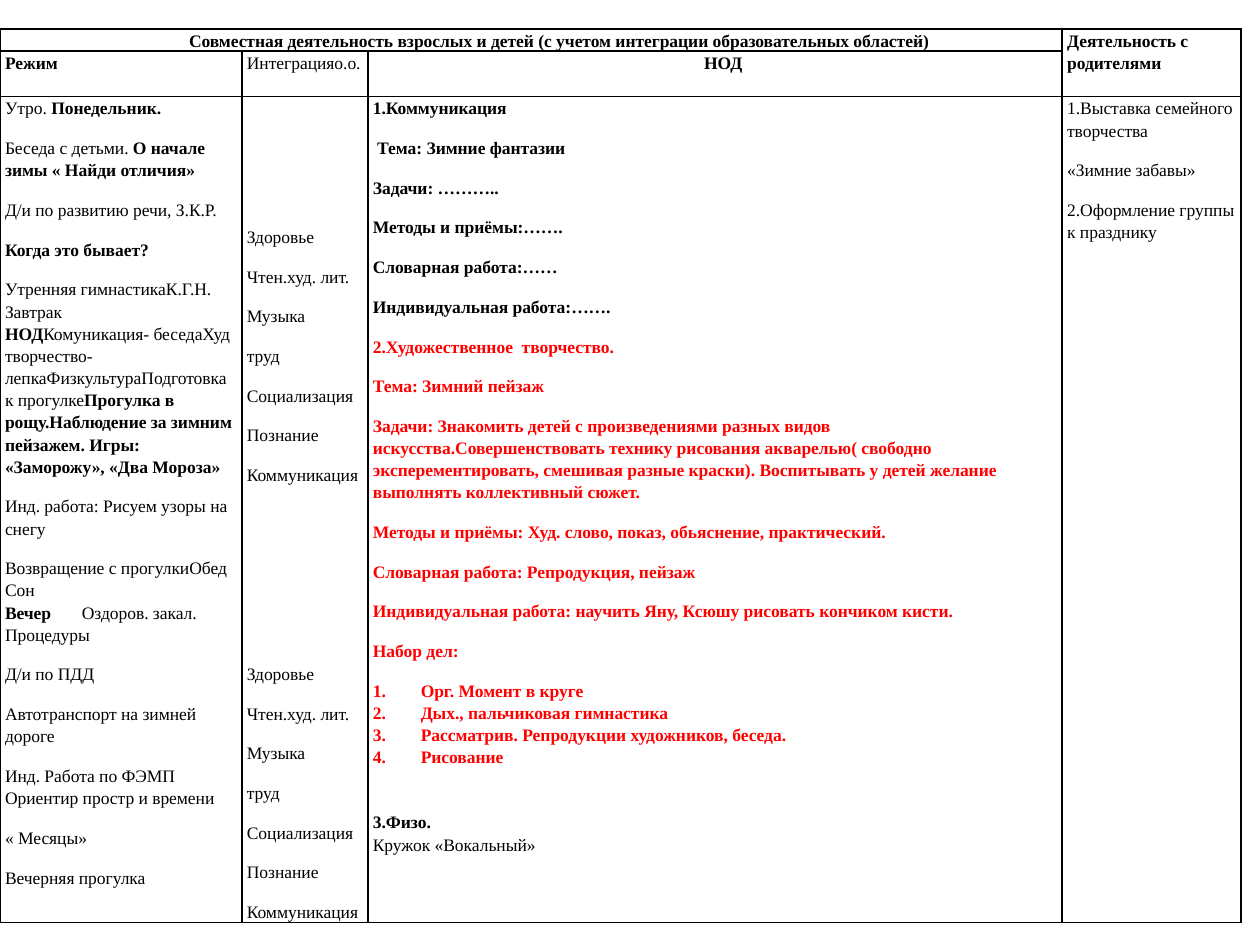
from dataclasses import dataclass
from lxml.etree import SubElement
from pptx import Presentation
from pptx.dml.color import RGBColor
from pptx.enum.text import PP_ALIGN
from pptx.oxml.ns import qn
from pptx.util import Inches, Pt

COLORS = {"black": "000000", "red": "FF0000", "white": "FFFFFF"}
FONT = "Times New Roman"
COLUMNS = [1.92, 1, 5.51, 1.42]
ROWS = [0.17, 0.36, 6.55]


@dataclass
class Entry:
    """One paragraph of a cell; runs alternate between plain and bold."""
    runs: list
    bold: bool = False
    color: str = "black"
    before: float = 0
    after: float = 10
    numbered: bool = False
    tab: float = 0


def plain(*runs, **options):
    """Return a paragraph whose first run is plain."""
    return Entry(list(runs), **options)


def strong(*runs, **options):
    """Return a paragraph whose first run is bold."""
    return Entry(list(runs), bold=True, **options)


REGIME = [
    plain("Утро. ", "Понедельник."),
    plain("Беседа с детьми.", " О начале зимы « Найди отличия»"),
    plain("Д/и по развитию речи, З.К.Р."),
    strong("Когда это бывает?"),
    plain("Утренняя гимнастикаК.Г.Н. Завтрак", after=0),
    strong("НОД", "Комуникация- беседаХуд творчество-лепкаФизкультураПодготовка к прогулке",
           "Прогулка в рощу.Наблюдение за зимним пейзажем. Игры: «Заморожу», «Два Мороза»"),
    plain("Инд. работа: Рисуем узоры на снегу"),
    plain("Возвращение с прогулкиОбед", after=0),
    plain("Сон", after=0),
    strong("Вечер", "\tОздоров. закал. Процедуры", tab=0.61),
    plain("Д/и по ПДД"),
    plain("Автотранспорт на зимней дороге"),
    plain("Инд. Работа по ФЭМП Ориентир простр и времени"),
    plain("« Месяцы»"),
    plain("Вечерняя прогулка"),
]
AREAS = ["Здоровье", "Чтен.худ. лит.", "Музыка", "труд",
         "Социализация", "Познание", "Коммуникация"]
INTEGRATION = [plain(area, before=gap if area == AREAS[0] else 0)
               for gap in (0, 91) for area in AREAS]
COMMUNICATION = ["1.Коммуникация", " Тема: Зимние фантазии", "Задачи: ………..",
                 "Методы и приёмы:…….", "Словарная работа:……",
                 "Индивидуальная работа:……."]
ART = [
    "2.Художественное  творчество.",
    "Тема: Зимний пейзаж",
    "Задачи: Знакомить детей с произведениями разных видов "
    "искусства.Совершенствовать технику рисования акварелью( свободно "
    "эксперементировать, смешивая разные краски). Воспитывать у детей желание "
    "выполнять коллективный сюжет.",
    "Методы и приёмы: Худ. слово, показ, обьяснение, практический.",
    "Словарная работа: Репродукция, пейзаж",
    "Индивидуальная работа: научить Яну, Ксюшу рисовать кончиком кисти.",
    "Набор дел:",
]
STEPS = ["Орг. Момент в круге", "Дых., пальчиковая гимнастика",
         "Рассматрив. Репродукции художников, беседа.", "Рисование"]
LESSONS = (
    [strong(text) for text in COMMUNICATION]
    + [strong(text, color="red") for text in ART]
    + [strong(text, color="red", numbered=True, after=24.5 if text == STEPS[-1] else 0)
       for text in STEPS]
    + [strong("3.Физо.", after=0), plain("Кружок «Вокальный»", after=0)]
)
PARENTS = [plain("1.Выставка семейного творчества"), plain("«Зимние забавы»"),
           plain("2.Оформление группы к празднику")]


def add_entry(paragraph, entry, align):
    """Format one paragraph and add its runs."""
    paragraph.alignment = align
    paragraph.line_spacing = 1.15
    paragraph.space_before = Pt(entry.before)
    paragraph.space_after = Pt(entry.after)
    properties = paragraph._p.get_or_add_pPr()
    if entry.numbered:
        properties.set("marL", str(Inches(0.38)))
        properties.set("indent", str(-Inches(0.38)))
        SubElement(properties, qn("a:buFont"), typeface="+mj-lt")
        SubElement(properties, qn("a:buAutoNum"), type="arabicPeriod")
    if entry.tab:
        tabs = SubElement(properties, qn("a:tabLst"))
        SubElement(tabs, qn("a:tab"), pos=str(Inches(entry.tab)), algn="l")
    for index, text in enumerate(entry.runs):
        run = paragraph.add_run()
        run.text = text
        run.font.name = FONT
        run.font.size = Pt(10)
        run.font.bold = entry.bold != (index % 2 == 1)
        run.font.color.rgb = RGBColor.from_string(COLORS[entry.color])


def fill_cell(cell, entries, align=PP_ALIGN.LEFT, left=0.04, top=0):
    """Write paragraphs into a cell with the given margins."""
    cell.margin_left, cell.margin_right = Inches(left), Inches(0.04)
    cell.margin_top, cell.margin_bottom = Inches(top), Inches(0)
    for index, entry in enumerate(entries):
        frame = cell.text_frame
        paragraph = frame.add_paragraph() if index else frame.paragraphs[0]
        add_entry(paragraph, entry, align)


def style_cell(cell):
    """Give a cell thin black borders and a white fill."""
    properties = cell._tc.get_or_add_tcPr()
    for side in ("L", "R", "T", "B"):
        line = SubElement(properties, qn(f"a:ln{side}"), w=str(Pt(1)))
        fill = SubElement(line, qn("a:solidFill"))
        SubElement(fill, qn("a:srgbClr"), val=COLORS["black"])
    cell.fill.solid()
    cell.fill.fore_color.rgb = RGBColor.from_string(COLORS["white"])


def add_plan_table(slide, left, top):
    """Place the day plan table with its top left corner at the given point."""
    frame = slide.shapes.add_table(len(ROWS), len(COLUMNS), Inches(left), Inches(top),
                                   Inches(sum(COLUMNS)), Inches(sum(ROWS)))
    table = frame.table
    table.first_row = table.horz_banding = False
    for column, width in zip(table.columns, COLUMNS):
        column.width = Inches(width)
    for row, height in zip(table.rows, ROWS):
        row.height = Inches(height)
    for cell in table.iter_cells():
        style_cell(cell)
        fill_cell(cell, [plain("", after=0)])
    table.cell(0, 0).merge(table.cell(0, 2))
    table.cell(0, 3).merge(table.cell(1, 3))

    heading = strong("Совместная деятельность взрослых и детей "
                     "(с учетом интеграции образовательных областей)")
    fill_cell(table.cell(0, 0), [heading], PP_ALIGN.CENTER, left=0.48)
    fill_cell(table.cell(0, 3), [strong("Деятельность с родителями")])
    fill_cell(table.cell(1, 0), [strong("Режим")])
    fill_cell(table.cell(1, 1), [plain("Интеграцияо.о.")])
    fill_cell(table.cell(1, 2), [strong("НОД")], PP_ALIGN.CENTER, left=0.17)
    fill_cell(table.cell(2, 0), REGIME)
    fill_cell(table.cell(2, 1), INTEGRATION, top=1.02)
    fill_cell(table.cell(2, 2), LESSONS)
    fill_cell(table.cell(2, 3), PARENTS)


def main():
    """Build the presentation and save it."""
    presentation = Presentation()
    presentation.slide_width, presentation.slide_height = Inches(10), Inches(7.5)
    slide = presentation.slides.add_slide(presentation.slide_layouts[6])
    add_plan_table(slide, 0, 0.23)
    presentation.save("out.pptx")


if __name__ == "__main__":
    main()
